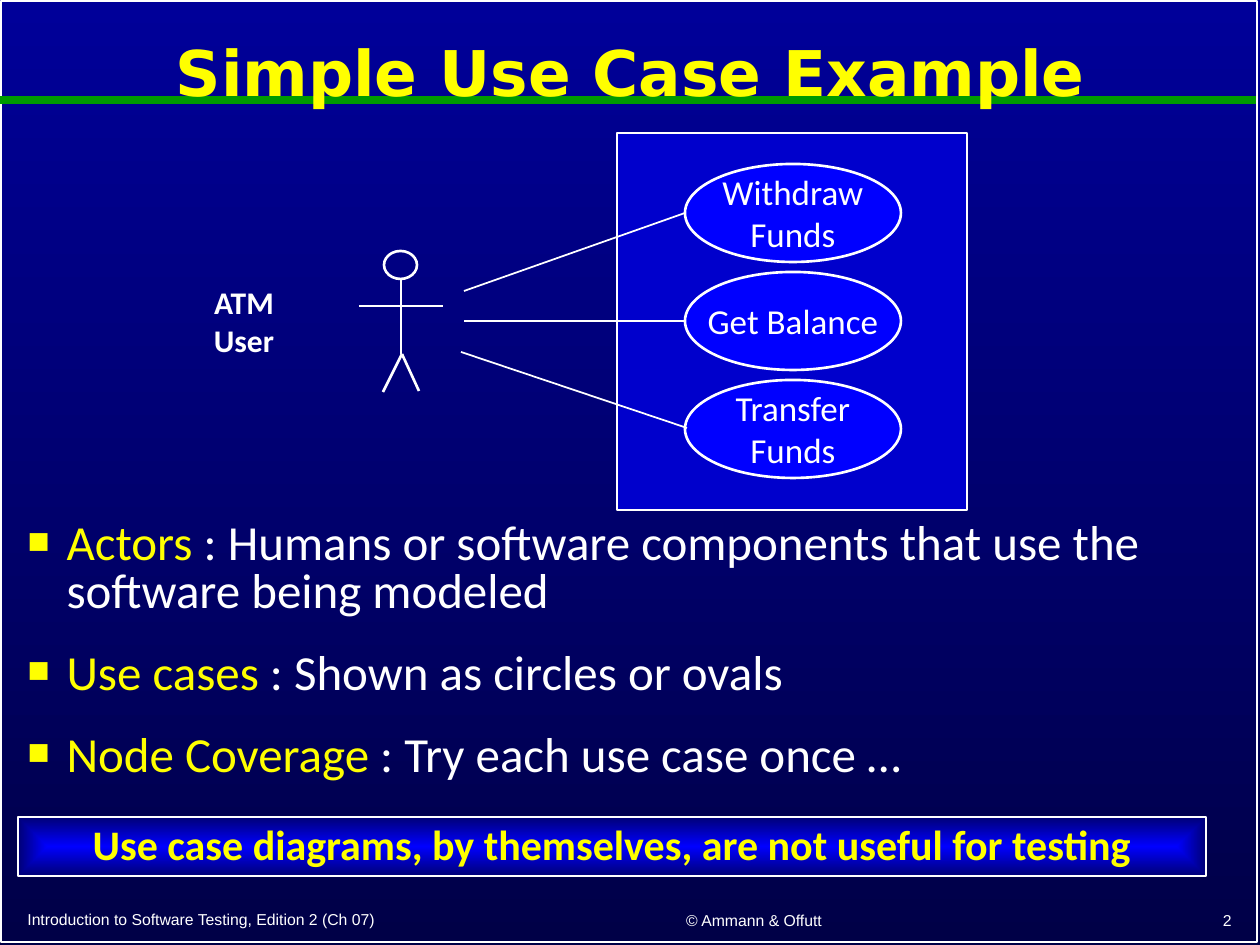
from dataclasses import dataclass

import lxml.etree
import pptx
import pptx.dml.color
import pptx.enum.dml
import pptx.enum.shapes
import pptx.enum.text
import pptx.oxml.ns
import pptx.util

EMU_PER_PX = 914400 / 126
SHAPE = pptx.enum.shapes.MSO_SHAPE
ALIGN = pptx.enum.text.PP_ALIGN
MIDDLE = pptx.enum.text.MSO_ANCHOR.MIDDLE
qn = pptx.oxml.ns.qn


@dataclass(frozen=True)
class Theme:
    white: str = "FFFFFF"
    yellow: str = "FFFF00"
    green: str = "009900"
    system_fill: str = "0000CC"
    oval_fill: str = "0000FF"
    backdrop: tuple[str, str] = ("000099", "000047")
    banner: tuple[str, str] = ("0000FF", "000076")
    title_font: str = "DejaVu Sans"
    text_font: str = "Calibri"
    footer_font: str = "Arial"
    title_size: int = 36
    body_size: int = 28
    banner_size: int = 24
    oval_size: int = 20
    actor_size: int = 18
    footer_size: int = 9


THEME = Theme()


@dataclass(frozen=True)
class Box:
    left: int
    top: int
    width: int
    height: int

    def emu(self) -> list[pptx.util.Emu]:
        return [px(n) for n in (self.left, self.top, self.width, self.height)]


@dataclass(frozen=True)
class Style:
    size: int
    font: str = THEME.text_font
    color: str = THEME.white
    bold: bool = False


@dataclass(frozen=True)
class Line:
    x1: int
    y1: int
    x2: int
    y2: int


@dataclass(frozen=True)
class UseCase:
    name: str
    line: Line


@dataclass(frozen=True)
class Footer:
    text: str
    box: Box
    align: ALIGN


OVAL = Box(685, 164, 216, 98)
OVAL_PITCH = 108
USE_CASES = [
    UseCase("Withdraw\nFunds", Line(685, 213, 464, 291)),
    UseCase("Get Balance", Line(685, 321, 464, 321)),
    UseCase("Transfer\nFunds", Line(687, 428, 461, 352)),
]
ACTOR_HEAD = Box(384, 251, 33, 28)
ACTOR_LIMBS = [
    Line(359, 306, 443, 306),
    Line(401, 278, 401, 354),
    Line(402, 354, 383, 392),
    Line(402, 354, 419, 391),
]
DEFINITIONS = [
    ("Actors", " : Humans or software components that use the software being modeled"),
    ("Use cases", " : Shown as circles or ovals"),
    ("Node Coverage", " : Try each use case once …"),
]
FOOTERS = [
    Footer("Introduction to Software Testing, Edition 2 (Ch 07)", Box(15, 902, 520, 34), ALIGN.LEFT),
    Footer("© Ammann & Offutt", Box(554, 903, 400, 34), ALIGN.CENTER),
    Footer("2", Box(981, 903, 263, 34), ALIGN.RIGHT),
]


def px(n: int) -> pptx.util.Emu:
    return pptx.util.Emu(round(n * EMU_PER_PX))


def rgb(color: str) -> pptx.dml.color.RGBColor:
    return pptx.dml.color.RGBColor.from_string(color)


def style_run(run, style: Style) -> None:
    run.font.size = pptx.util.Pt(style.size)
    run.font.name = style.font
    run.font.bold = style.bold
    run.font.color.rgb = rgb(style.color)


def write(shape, text: str, style: Style, align=ALIGN.CENTER, wrap=True, spacing=1.0) -> None:
    frame = shape.text_frame
    frame.text = text
    frame.word_wrap = wrap
    frame.auto_size = pptx.enum.text.MSO_AUTO_SIZE.NONE
    frame.vertical_anchor = MIDDLE
    for paragraph in frame.paragraphs:
        paragraph.alignment = align
        paragraph.line_spacing = spacing
        for run in paragraph.runs:
            style_run(run, style)


def set_gradient(fill, colors: tuple[str, str]) -> None:
    """Run a linear gradient from top to bottom."""
    fill.gradient()
    fill.gradient_angle = 270
    for stop, position, color in zip(fill.gradient_stops, (0, 1), colors):
        stop.position = position
        stop.color.rgb = rgb(color)


def radiate_from_center(shape) -> None:
    """Turn the shape's linear gradient into one that follows its outline."""
    linear = shape._element.spPr.find(qn("a:gradFill")).find(qn("a:lin"))
    outline = lxml.etree.Element(qn("a:path"), path="shape")
    lxml.etree.SubElement(outline, qn("a:fillToRect"), l="50000", t="50000", r="50000", b="50000")
    linear.getparent().replace(linear, outline)


def add_outlined(shapes, kind: SHAPE, box: Box, weight: float, fill: str | None = None):
    shape = shapes.add_shape(kind, *box.emu())
    shape.shadow.inherit = False
    shape.line.color.rgb = rgb(THEME.white)
    shape.line.width = pptx.util.Pt(weight)
    if fill:
        shape.fill.solid()
        shape.fill.fore_color.rgb = rgb(fill)
    else:
        shape.fill.background()
    return shape


def add_line(shapes, line: Line, weight: float, color: str = THEME.white) -> None:
    ends = [px(n) for n in (line.x1, line.y1, line.x2, line.y2)]
    connector = shapes.add_connector(pptx.enum.shapes.MSO_CONNECTOR.STRAIGHT, *ends)
    connector.line.color.rgb = rgb(color)
    connector.line.width = pptx.util.Pt(weight)
    lxml.etree.SubElement(connector._element.spPr, qn("a:effectLst"))


def place(shapes, placeholder, box: Box) -> None:
    """Position a placeholder and bring it in front of what is drawn so far."""
    placeholder.left, placeholder.top, placeholder.width, placeholder.height = box.emu()
    shapes._spTree.append(placeholder._element)


def write_definitions(body) -> None:
    frame = body.text_frame
    frame.auto_size = pptx.enum.text.MSO_AUTO_SIZE.NONE
    for index, (term, meaning) in enumerate(DEFINITIONS):
        paragraph = frame.paragraphs[0] if index == 0 else frame.add_paragraph()
        for text, color in ((term, THEME.yellow), (meaning, THEME.white)):
            run = paragraph.add_run()
            run.text = text
            style_run(run, Style(THEME.body_size, color=color))
        paragraph.line_spacing = 0.8
        paragraph.space_before = pptx.util.Pt(8)
        paragraph.space_after = pptx.util.Pt(12)
        properties = paragraph._p.get_or_add_pPr()
        properties.set("marL", str(px(39)))
        properties.set("indent", str(px(-39)))
        bullet_color = lxml.etree.SubElement(properties, qn("a:buClr"))
        lxml.etree.SubElement(bullet_color, qn("a:srgbClr"), val=THEME.yellow)
        lxml.etree.SubElement(properties, qn("a:buSzPct"), val="75000")
        lxml.etree.SubElement(properties, qn("a:buChar"), char="■")


def main() -> None:
    deck = pptx.Presentation()
    deck.slide_width, deck.slide_height = px(1260), px(945)
    slide = deck.slides.add_slide(deck.slide_layouts[1])
    shapes = slide.shapes
    title, body = slide.placeholders
    set_gradient(slide.background.fill, THEME.backdrop)

    add_outlined(shapes, SHAPE.RECTANGLE, Box(1, 1, 1256, 941), 1)
    add_line(shapes, Line(0, 100, 1256, 100), 4.5, THEME.green)
    for footer in FOOTERS:
        label = shapes.add_textbox(*footer.box.emu())
        write(label, footer.text, Style(THEME.footer_size, THEME.footer_font), footer.align)

    add_outlined(shapes, SHAPE.RECTANGLE, Box(617, 133, 350, 377), 1.5, THEME.system_fill)
    place(shapes, title, Box(15, 11, 1231, 130))
    write(title, "Simple Use Case Example",
          Style(THEME.title_size, THEME.title_font, THEME.yellow, True), spacing=0.9)
    place(shapes, body, Box(15, 517, 1229, 296))
    write_definitions(body)

    actor = shapes.add_group_shape().shapes
    add_outlined(actor, SHAPE.OVAL, ACTOR_HEAD, 1.5)
    for limb in ACTOR_LIMBS:
        add_line(actor, limb, 1.5)
    actor_name = shapes.add_textbox(*Box(195, 277, 98, 88).emu())
    write(actor_name, "ATM\nUser", Style(THEME.actor_size, bold=True), wrap=False)

    for row, use_case in enumerate(USE_CASES):
        box = Box(OVAL.left, OVAL.top + row * OVAL_PITCH, OVAL.width, OVAL.height)
        oval = add_outlined(shapes, SHAPE.OVAL, box, 1.5, THEME.oval_fill)
        write(oval, use_case.name, Style(THEME.oval_size), wrap=False)
        add_line(shapes, use_case.line, 1)

    banner = add_outlined(shapes, SHAPE.RECTANGLE, Box(18, 817, 1188, 59), 1)
    set_gradient(banner.fill, THEME.banner)
    radiate_from_center(banner)
    write(banner, "Use case diagrams, by themselves, are not useful for testing",
          Style(THEME.banner_size, color=THEME.yellow, bold=True), spacing=0.9)

    deck.save("out.pptx")


if __name__ == "__main__":
    main()
